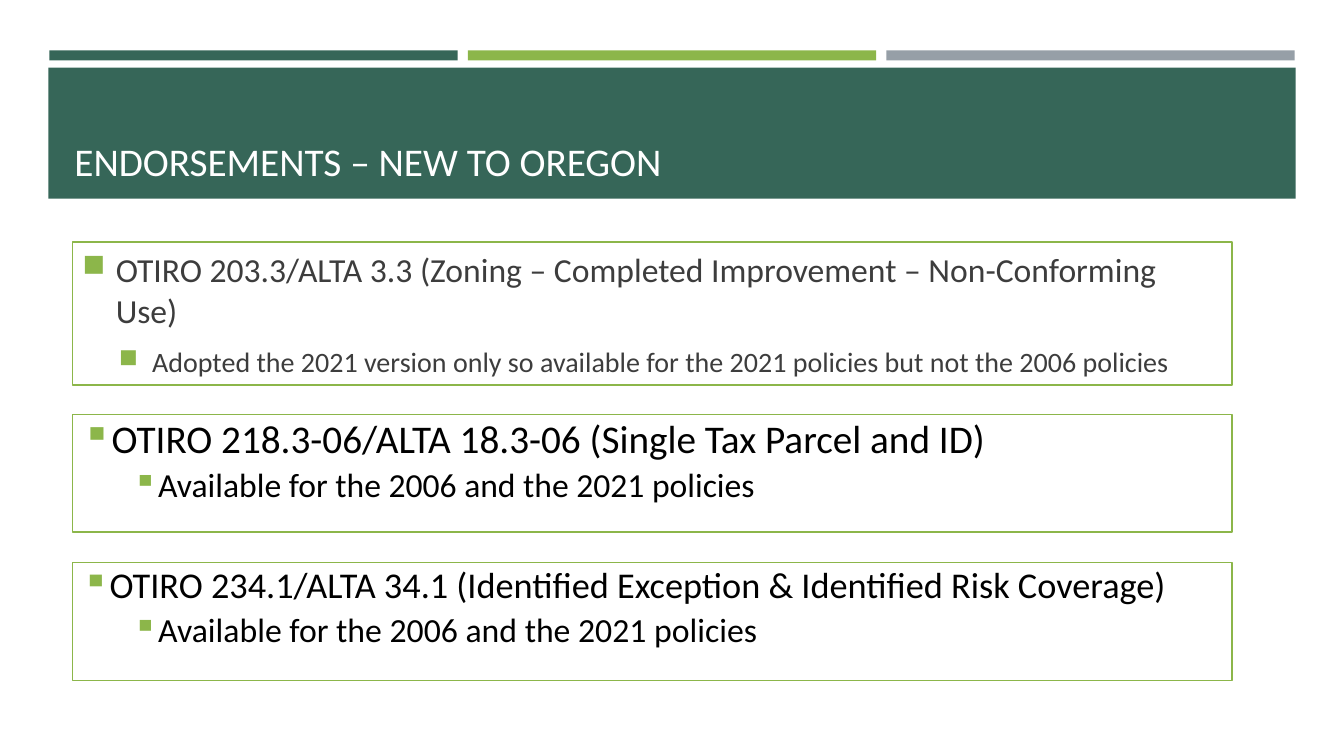
from lxml import etree
from pptx import Presentation
from pptx import util as u
from pptx.dml.color import RGBColor
from pptx.enum import shapes, text
from pptx.oxml.ns import qn

PINE = RGBColor(0x36, 0x66, 0x58)
LEAF = RGBColor(0x8C, 0xB6, 0x4A)
SLATE = RGBColor(0x96, 0x9F, 0xA7)
CHARCOAL = RGBColor(0x3D, 0x3D, 0x3D)
BLACK = RGBColor(0, 0, 0)
WHITE = RGBColor(0xFF, 0xFF, 0xFF)


class EndorsementSlide:
    font_name = "Calibri"

    def __init__(self, deck):
        self.slide = deck.slides.add_slide(deck.slide_layouts[6])

    def rectangle(self, left, top, width, height, fill=None, outline=None):
        panel = self.slide.shapes.add_shape(
            shapes.MSO_SHAPE.RECTANGLE, *map(u.Inches, (left, top, width, height)))
        panel.shadow.inherit = False
        if fill is None:
            panel.fill.background()
        else:
            panel.fill.solid()
            panel.fill.fore_color.rgb = fill
        if outline is None:
            panel.line.fill.background()
        else:
            panel.line.color.rgb = outline
            panel.line.width = u.Pt(1)
        return panel

    def style(self, paragraph, size, color):
        paragraph.alignment = text.PP_ALIGN.LEFT
        paragraph.font.name = self.font_name
        paragraph.font.size = u.Pt(size)
        paragraph.font.color.rgb = color

    def title(self, wording, left, top, width, height):
        heading = self.slide.shapes.add_textbox(
            *map(u.Inches, (left, top, width, height))).text_frame
        heading.word_wrap = True
        heading.vertical_anchor = text.MSO_ANCHOR.BOTTOM
        heading.text = wording
        self.style(heading.paragraphs[0], 28, WHITE)

    def bullet(self, paragraph, mark, indent, hanging, percent):
        props = paragraph._p.get_or_add_pPr()
        props.set("marL", str(u.Inches(indent)))
        props.set("indent", str(-u.Inches(hanging)))
        tint = etree.SubElement(props, qn("a:buClr"))
        etree.SubElement(tint, qn("a:srgbClr"), val=str(LEAF))
        etree.SubElement(props, qn("a:buSzPct"), val=str(percent * 1000))
        etree.SubElement(props, qn("a:buChar"), char=mark)

    def endorsement(self, top, height, lines, sizes, color, anchor, mark, indents,
                    hanging, before, after=0, spacing=1.0, percent=100):
        """Outlined box with a form name and an indented note on its availability."""
        frame = self.rectangle(0.72, top, 11.5, height, outline=LEAF).text_frame
        frame.word_wrap = True
        frame.vertical_anchor = anchor
        frame.text = "\n".join(lines)
        for level, paragraph in enumerate(frame.paragraphs):
            paragraph.level = level
            paragraph.line_spacing = spacing
            paragraph.space_before = u.Pt(before[level])
            paragraph.space_after = u.Pt(after)
            self.bullet(paragraph, mark, indents[level], hanging, percent)
            self.style(paragraph, sizes[level], color)


def main():
    deck = Presentation()
    deck.slide_width, deck.slide_height = u.Inches(13.33), u.Inches(7.5)
    page = EndorsementSlide(deck)

    for column, color in enumerate((PINE, LEAF, SLATE)):
        page.rectangle(0.49 + 4.15 * column, 0.5, 4.05, 0.1, fill=color)
    page.rectangle(0.48, 0.67, 12.37, 1.3, fill=PINE)
    page.title("ENDORSEMENTS – NEW TO OREGON", 0.64, 0.77, 12.06, 1.11)

    page.endorsement(
        2.4, 1.42,
        ("OTIRO 203.3/ALTA 3.3 (Zoning – Completed Improvement – Non-Conforming Use)",
         "Adopted the 2021 version only so available for the 2021 policies "
         "but not the 2006 policies"),
        (24, 20), CHARCOAL, text.MSO_ANCHOR.MIDDLE, "■", (0.33, 0.69), 0.33,
        before=(4.8, 4), after=6, percent=92)

    both_policies = "Available for the 2006 and the 2021 policies"
    forms = (
        ("OTIRO 218.3-06/ALTA 18.3-06 (Single Tax Parcel and ID)", (28, 24)),
        ("OTIRO 234.1/ALTA 34.1 (Identified Exception & Identified Risk Coverage)",
         (25.9, 24.1)),
    )
    for row, (form, sizes) in enumerate(forms):
        page.endorsement(
            4.11 + 1.47 * row, 1.17, (form, both_policies), sizes, BLACK,
            text.MSO_ANCHOR.TOP, "▪", (0.25, 0.75), 0.25,
            before=(10, 5), spacing=0.9)

    deck.save("out.pptx")


if __name__ == "__main__":
    main()
